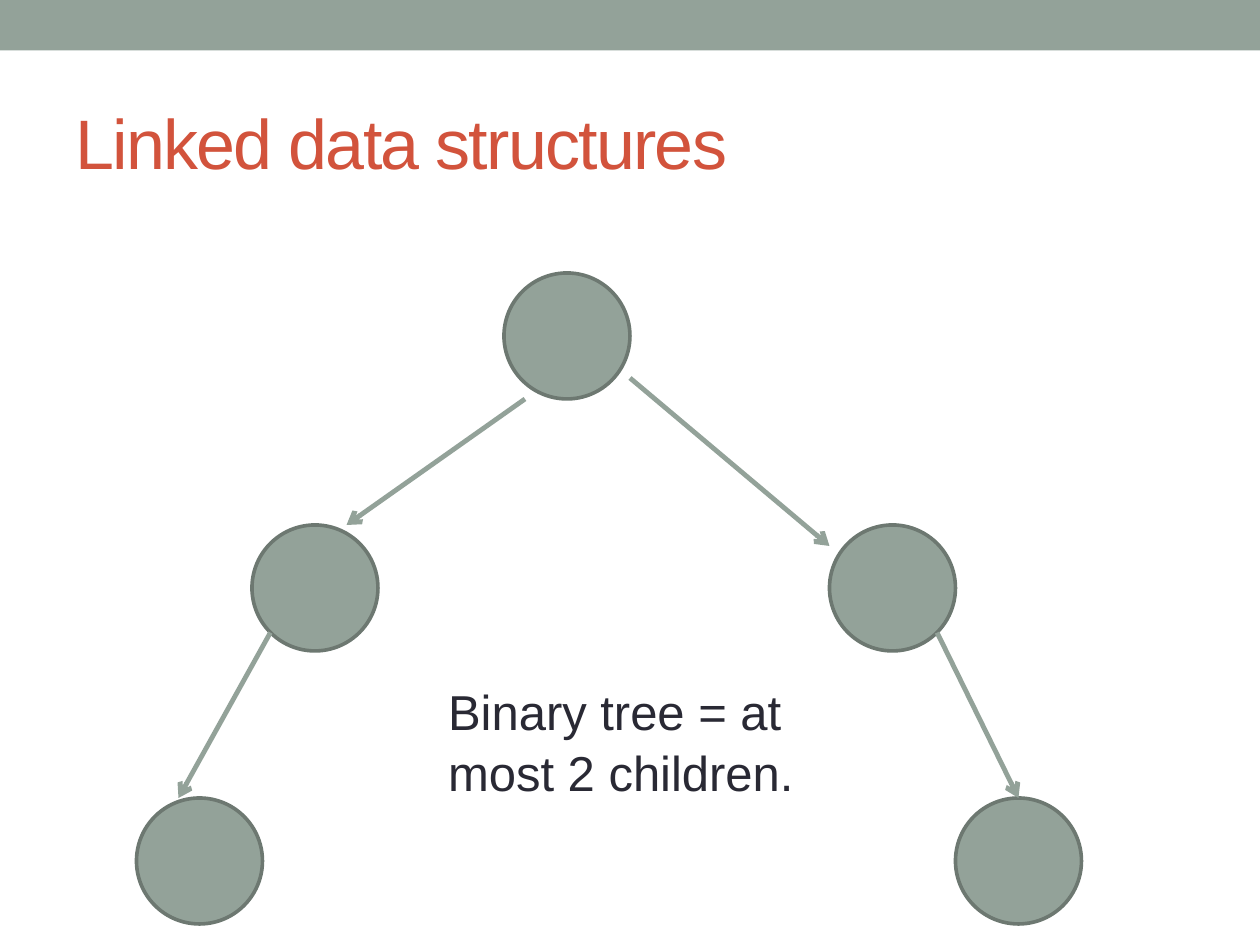
from dataclasses import dataclass

from lxml.etree import SubElement
from pptx import Presentation
from pptx.dml.color import RGBColor as RGB
from pptx.enum.shapes import MSO_CONNECTOR as Link, MSO_SHAPE as Kind
from pptx.enum.text import MSO_ANCHOR as Anchor, MSO_AUTO_SIZE as Fit
from pptx.oxml.ns import qn
from pptx.util import Pt


@dataclass(frozen=True)
class Theme:
    font: str = "Arial"
    sage: RGB = RGB(0x93, 0xA2, 0x99)
    edge: RGB = RGB(0x6D, 0x78, 0x71)
    red: RGB = RGB(0xD2, 0x53, 0x3C)
    ink: RGB = RGB(0x29, 0x29, 0x34)
    head: int = 40
    body: int = 28


THEME = Theme()
SIZE = 72  # node diameter


def add_shape(slide, kind, box, edge=None):
    shape = slide.shapes.add_shape(kind, *map(Pt, box))
    shape.shadow.inherit = False
    shape.fill.solid()
    shape.fill.fore_color.rgb = THEME.sage
    if edge is None:
        shape.line.fill.background()
    else:
        shape.line.color.rgb = edge
        shape.line.width = Pt(2.08)
    return shape


def add_node(slide, left, top):
    return add_shape(slide, Kind.OVAL, (left, top, SIZE, SIZE), THEME.edge)


def add_arrow(slide, start, end):
    arrow = slide.shapes.add_connector(Link.STRAIGHT, *map(Pt, start + end))
    arrow.line.color.rgb = THEME.sage
    arrow.line.width = Pt(2.75)
    SubElement(arrow.line._get_or_add_ln(), qn("a:tailEnd"), type="arrow")
    SubElement(arrow._element.spPr, qn("a:effectLst"))
    return arrow


def add_text(slide, box, text, size, color):
    label = slide.shapes.add_textbox(*map(Pt, box))
    frame = label.text_frame
    frame.word_wrap = True
    frame.text = text
    font = frame.paragraphs[0].runs[0].font
    font.name, font.size = THEME.font, Pt(size)
    font.color.rgb = color
    return frame


def main():
    deck = Presentation()
    deck.slide_width, deck.slide_height = Pt(720), Pt(540)
    slide = deck.slides.add_slide(deck.slide_layouts[6])

    # Top band and title
    add_shape(slide, Kind.RECTANGLE, (0, 0, 720, 28.8))
    title = add_text(slide, (36, 41.76, 648, 77.76),
                     "Linked data structures", THEME.head, THEME.red)
    title.vertical_anchor = Anchor.MIDDLE
    title.paragraphs[0].runs[0].font._element.set("spc", "-100")

    # Tree nodes, level by level
    add_node(slide, 288, 156)
    for left in (144, 474):
        add_node(slide, left, 300)
    add_node(slide, 78, 456)
    leaf = add_node(slide, 546, 456)

    # Arrows from parent to child
    add_arrow(slide, (300, 228), (198, 300))
    add_arrow(slide, (360, 216), (474, 312))
    add_arrow(slide, (154.5, 361.5), (102, 456))
    last = add_arrow(slide, (535.5, 361.5), (582, 456))
    last.end_connect(leaf, 0)

    # Caption
    note = add_text(slide, (249, 384, 237, 108.72),
                    "Binary tree = at most 2 children.", THEME.body, THEME.ink)
    note.auto_size = Fit.SHAPE_TO_FIT_TEXT
    note.paragraphs[0].line_spacing = 1.05

    deck.save("out.pptx")


if __name__ == "__main__":
    main()
